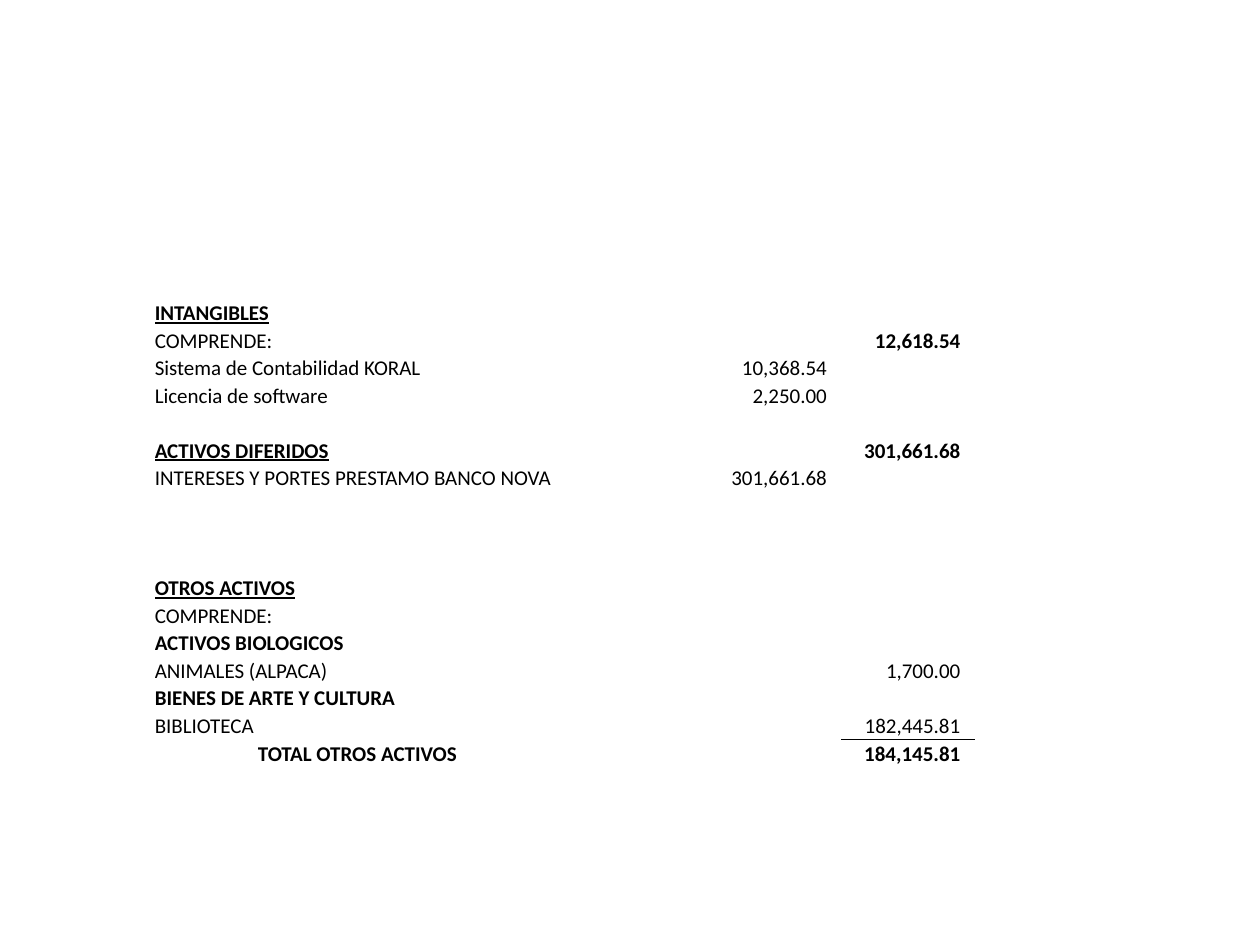
from dataclasses import dataclass

from lxml import etree
from pptx import Presentation
from pptx.dml.color import RGBColor
from pptx.enum.text import MSO_ANCHOR, PP_ALIGN
from pptx.oxml.ns import qn
from pptx.util import Cm, Pt

BOTTOM = MSO_ANCHOR.BOTTOM
LEFT, RIGHT = PP_ALIGN.LEFT, PP_ALIGN.RIGHT


@dataclass(frozen=True)
class Theme:
    font: str = "Calibri"
    size: int = 12
    ink: str = "000000"
    rule: float = 0.5


THEME = Theme()
COL_WIDTHS = (2.08, 3.91, 2.16, 2.82, 2.9, 2.69, 2.69)
LABEL, INDENTED, DETAIL, TOTAL = 0, 1, 4, 5

# Each row lists its cells as (column, text, style, columns spanned);
# style is "" for plain, "b" for bold, "bu" for bold underlined.
ROWS = [
    [(LABEL, "INTANGIBLES", "bu", 2)],
    [(LABEL, "COMPRENDE:", "", 2), (TOTAL, "12,618.54", "b", 1)],
    [(LABEL, "Sistema de Contabilidad KORAL", "", 2), (DETAIL, "10,368.54", "", 1)],
    [(LABEL, "Licencia de software", "", 4), (DETAIL, "2,250.00", "", 1)],
    [],
    [(LABEL, "ACTIVOS DIFERIDOS", "bu", 2), (TOTAL, "301,661.68", "b", 1)],
    [(LABEL, "INTERESES Y PORTES PRESTAMO BANCO NOVA", "", 4),
     (DETAIL, "301,661.68", "", 1)],
    [],
    [],
    [],
    [(LABEL, "OTROS ACTIVOS", "bu", 2)],
    [(LABEL, "COMPRENDE:", "", 2)],
    [(LABEL, "ACTIVOS BIOLOGICOS", "b", 2)],
    [(LABEL, "ANIMALES (ALPACA)", "", 2), (TOTAL, "1,700.00", "", 1)],
    [(LABEL, "BIENES DE ARTE Y CULTURA", "b", 2)],
    [(LABEL, "BIBLIOTECA", "", 2), (TOTAL, "182,445.81", "", 1)],
    [(INDENTED, "TOTAL OTROS ACTIVOS", "b", 2), (TOTAL, "184,145.81", "b", 1)],
]


def clear_cell(cell):
    """Remove the fill and fix margins and the type size of an empty cell."""
    cell.fill.background()
    cell.vertical_anchor = BOTTOM
    cell.margin_left = cell.margin_right = cell.margin_top = Cm(0.02)
    cell.margin_bottom = 0
    p = cell.text_frame.paragraphs[0]
    end = etree.SubElement(p._p, qn("a:endParaRPr"))
    end.set("sz", str(THEME.size * 100))


def write_cell(cell, text, style, is_number):
    p = cell.text_frame.paragraphs[0]
    p.alignment = RIGHT if is_number else LEFT
    if is_number:
        cell.margin_right = Cm(0.3)
    r = p.add_run()
    r.text = text
    r.font.name = THEME.font
    r.font.size = Pt(THEME.size)
    r.font.bold = "b" in style
    r.font.underline = "u" in style
    r.font.color.rgb = RGBColor.from_string(THEME.ink)


def add_border(cell, side):
    ln = etree.Element(qn(f"a:ln{side}"), w=str(Pt(THEME.rule)))
    fill = etree.SubElement(ln, qn("a:solidFill"))
    etree.SubElement(fill, qn("a:srgbClr"), val=THEME.ink)
    cell._tc.get_or_add_tcPr().insert(0, ln)


def add_assets_table(s, left, top, height):
    width = Cm(sum(COL_WIDTHS))
    table = s.shapes.add_table(
        len(ROWS), len(COL_WIDTHS), left, top, width, height).table
    table.first_row = table.horz_banding = False
    for column, col_width in zip(table.columns, COL_WIDTHS):
        column.width = Cm(col_width)
    for cell in table.iter_cells():
        clear_cell(cell)
    for i, row in enumerate(ROWS):
        for col, text, style, span in row:
            cell = table.cell(i, col)
            if span > 1:
                cell.merge(table.cell(i, col + span - 1))
            write_cell(cell, text, style, col >= DETAIL)
    last = len(ROWS) - 1
    add_border(table.cell(last - 1, TOTAL), "B")
    add_border(table.cell(last, TOTAL), "T")


def main():
    prs = Presentation()
    prs.slide_width, prs.slide_height = Cm(25.4), Cm(19.05)
    s = prs.slides.add_slide(prs.slide_layouts[6])
    add_assets_table(s, Cm(3.1), Cm(6.02), Cm(9.45))
    prs.save("out.pptx")


if __name__ == "__main__":
    main()
